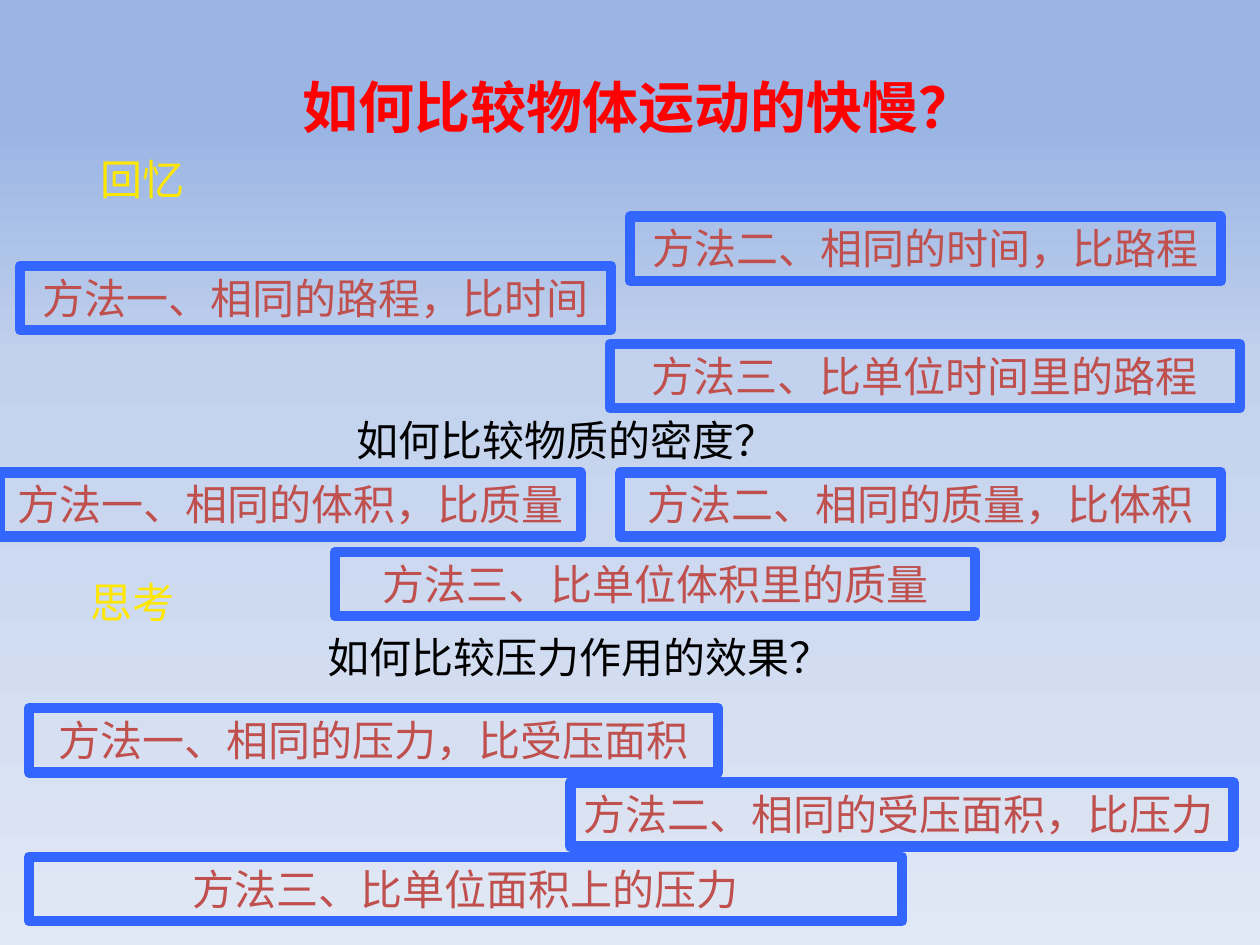
"""Build a slide on comparing motion, density and pressure."""
from copy import deepcopy

from pptx import Presentation
from pptx.dml.color import RGBColor
from pptx.enum.shapes import MSO_SHAPE
from pptx.enum.text import MSO_ANCHOR, PP_ALIGN
from pptx.util import Inches, Pt

RECT = MSO_SHAPE.RECTANGLE
TOP = MSO_ANCHOR.TOP
LEFT, MID = PP_ALIGN.LEFT, PP_ALIGN.CENTER

RED = RGBColor(0xFF, 0x00, 0x00)
BLACK = RGBColor(0x00, 0x00, 0x00)
BRICK = RGBColor(0xC0, 0x50, 0x4D)
BLUE = RGBColor(0x33, 0x66, 0xFF)
SKY = [(0.13, RGBColor(0x9A, 0xB5, 0xE4)),
       (0.39, RGBColor(0xC2, 0xD1, 0xED)),
       (1, RGBColor(0xE1, 0xE8, 0xF5))]
FLAME = [(0, RGBColor(0xFF, 0xE7, 0x01)),
         (1, RGBColor(0xFE, 0x3E, 0x02))]

ROW = 0.51
TITLE = ("如何比较物体运动的快慢？", 2.3, 0.53, 5.57, 0.64)
ASKS = [
    ("如何比较物质的密度？", 2.73, 3.24, 3.57, ROW),
    ("如何比较压力作用的效果？", 2.5, 4.96, 4.3, ROW),
]
TAGS = [
    ("回忆", 0.39, 1.17, 1.48, 0.86),
    ("思考", 0.31, 4.53, 1.48, 0.78),
]
WAYS = [
    ("方法一、相同的路程，比时间", 0.16, 2.11, 4.69, MID),
    ("方法二、相同的时间，比路程", 5, 1.72, 4.69, MID),
    ("方法三、比单位时间里的路程", 4.84, 2.73, 5, MID),
    ("方法一、相同的体积，比质量", 0, 3.75, 4.61, MID),
    ("方法二、相同的质量，比体积", 4.92, 3.75, 4.77, MID),
    ("方法三、比单位体积里的质量", 2.66, 4.38, 5.08, MID),
    ("方法一、相同的压力，比受压面积", 0.23, 5.62, 5.47, MID),
    ("方法二、相同的受压面积，比压力", 4.53, 6.21, 5.26, LEFT),
    ("方法三、比单位面积上的压力", 0.23, 6.8, 6.93, MID),
]
BASE = {"name": "Arial", "size": Pt(24), "bold": False}
HEAD = {**BASE, "size": Pt(32), "bold": True}


def shade(fill, stops):
    fill.gradient()
    fill.gradient_angle = 270
    first = fill.gradient_stops[0]._gs
    for _ in stops[2:]:
        first.addnext(deepcopy(first))
    for stop, (place, tint) in zip(fill.gradient_stops, stops):
        stop.position = place
        stop.color.rgb = tint


def write(shape, text, align, style=BASE, wrap=True):
    frame = shape.text_frame
    frame.word_wrap = wrap
    frame.vertical_anchor = TOP
    para = frame.paragraphs[0]
    para.alignment = align
    run = para.add_run()
    run.text = text
    for key, value in style.items():
        setattr(run.font, key, value)
    return run.font


def main():
    deck = Presentation()
    deck.slide_width, deck.slide_height = Inches(10), Inches(7.5)
    slide = deck.slides.add_slide(deck.slide_layouts[6])
    shade(slide.background.fill, SKY)
    shapes = slide.shapes

    for text, *area in TAGS:
        box = shapes.add_textbox(*map(Inches, area))
        shade(write(box, text, MID, wrap=False).fill, FLAME)

    heads = [(TITLE, HEAD, RED)] + [(ask, BASE, BLACK) for ask in ASKS]
    for (text, *area), style, tint in heads:
        box = shapes.add_textbox(*map(Inches, area))
        write(box, text, LEFT, style).color.rgb = tint

    for text, left, top, width, align in WAYS:
        box = shapes.add_shape(RECT, *map(Inches, (left, top, width, ROW)))
        box.shadow.inherit = False
        box.fill.background()
        box.line.color.rgb = BLUE
        box.line.width = Pt(6)
        write(box, text, align).color.rgb = BRICK

    deck.save("out.pptx")


if __name__ == "__main__":
    main()
